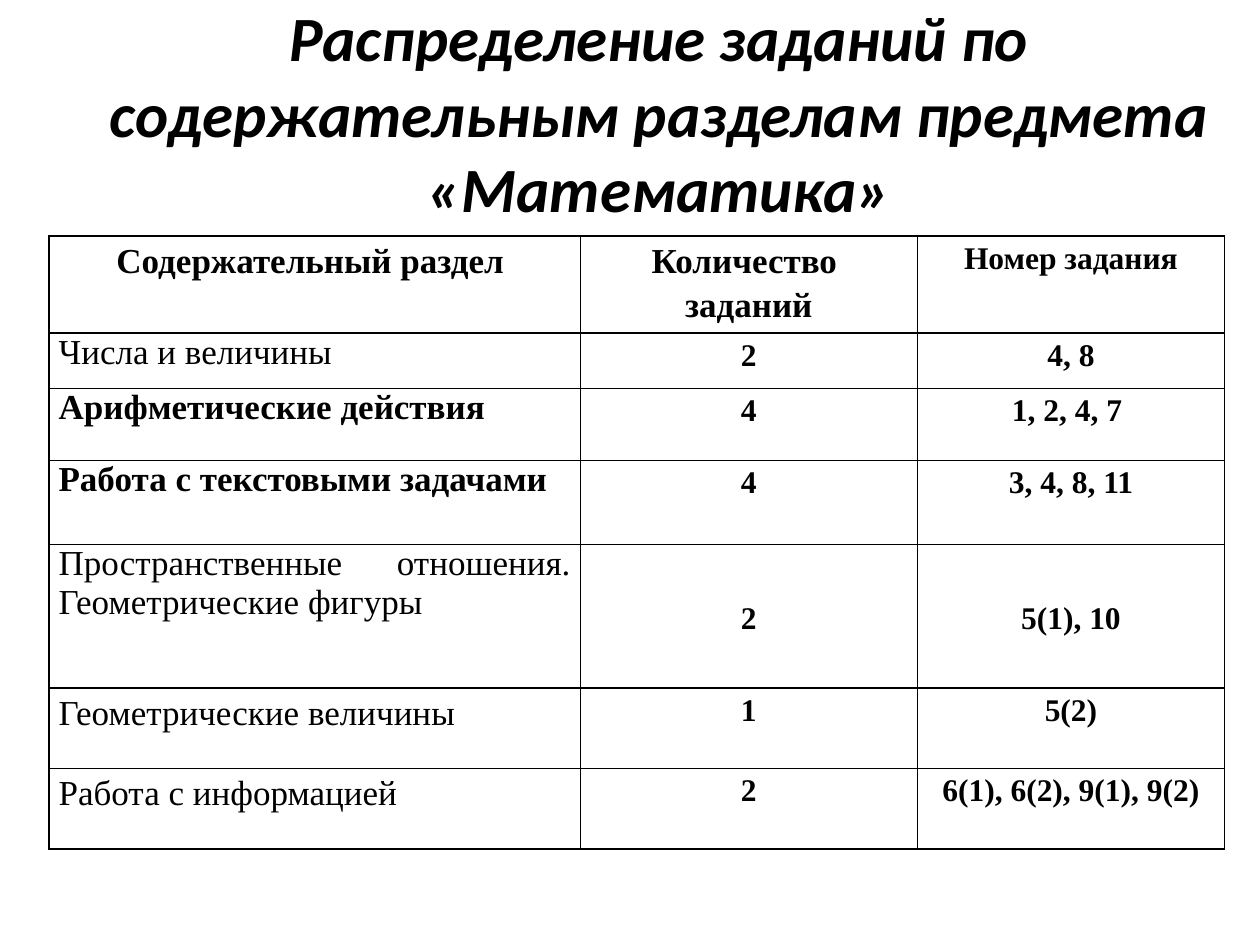
from pptx import Presentation
from pptx.util import Pt
from pptx.dml.color import RGBColor
from pptx.enum.text import PP_ALIGN, MSO_ANCHOR, MSO_AUTO_SIZE
from pptx.oxml import parse_xml
from pptx.oxml.ns import nsdecls

THEME = {
    "ink": "000000", "line": 1,
    "head": "Calibri", "body": "Times New Roman",
    "title": 36, "large": 20, "small": 18,
}
INK = RGBColor.from_string(THEME["ink"])


def style(para, face, size, bold, align, space=None):
    font = para.font
    font.name, font.size, font.bold = face, Pt(size), bold
    font.color.rgb = INK
    para.alignment = align
    if space:
        para.line_spacing = space


def frame(cell):
    props = cell._tc.get_or_add_tcPr()
    for side in ("lnL", "lnR", "lnT", "lnB"):
        props.append(parse_xml(
            f'<a:{side} {nsdecls("a")} w="{Pt(THEME["line"])}"><a:solidFill>'
            f'<a:srgbClr val="{THEME["ink"]}"/></a:solidFill></a:{side}>'))
    cell.fill.background()


prs = Presentation()
prs.slide_width, prs.slide_height = Pt(720), Pt(540)
slide = prs.slides.add_slide(prs.slide_layouts[5])

# Title
title = slide.shapes.title
title.left, title.top, title.width, title.height = Pt(44.64), Pt(21.6), Pt(663.84), Pt(84.96)
text = title.text_frame
text.text = "Распределение заданий по содержательным разделам предмета «Математика»"
text.auto_size = MSO_AUTO_SIZE.NONE
text.word_wrap = True
text.vertical_anchor = MSO_ANCHOR.MIDDLE
style(text.paragraphs[0], THEME["head"], THEME["title"], True, PP_ALIGN.CENTER)
text.paragraphs[0].font.italic = True

# Table content
rows = [
    ("Содержательный раздел ", "Количество \nзаданий", "Номер задания"),
    ("Числа и величины", "2", "4, 8"),
    ("Арифметические действия", "4", "1, 2, 4, 7 "),
    ("Работа с текстовыми задачами", "4", "3, 4, 8, 11"),
    ("Пространственные отношения. Геометрические фигуры", "2", "5(1), 10"),
    ("Геометрические величины", "1", "5(2)"),
    ("Работа с информацией", "2", "6(1), 6(2), 9(1), 9(2)"),
]
widths = [303.5, 192.6, 175.7]
heights = [55.5, 31.5, 41.2, 48, 82.2, 46, 46]
bold_rows = {0, 2, 3}
loose_rows = {0, 5, 6}
mid_row = 4

# Table grid
table = slide.shapes.add_table(len(rows), len(widths), Pt(28.08), Pt(134.9),
                               Pt(sum(widths)), Pt(sum(heights))).table
for col, width in zip(table.columns, widths):
    col.width = Pt(width)
for row, height in zip(table.rows, heights):
    row.height = Pt(height)

# Table cells
for r, row in enumerate(rows):
    for c, words in enumerate(row):
        cell = table.cell(r, c)
        cell.text = words
        cell.margin_left = cell.margin_right = Pt(5.4)
        cell.margin_top = cell.margin_bottom = 0
        name = c == 0
        if r == mid_row and not name:
            cell.vertical_anchor = MSO_ANCHOR.MIDDLE
        large = name or (r == 0 and c == 1)
        for para in cell.text_frame.paragraphs:
            style(para, THEME["body"], THEME["large" if large else "small"],
                  not name or r in bold_rows,
                  PP_ALIGN.JUSTIFY if name and r else PP_ALIGN.CENTER,
                  1.15 if not name or r in loose_rows else None)
        frame(cell)

prs.save("out.pptx")
